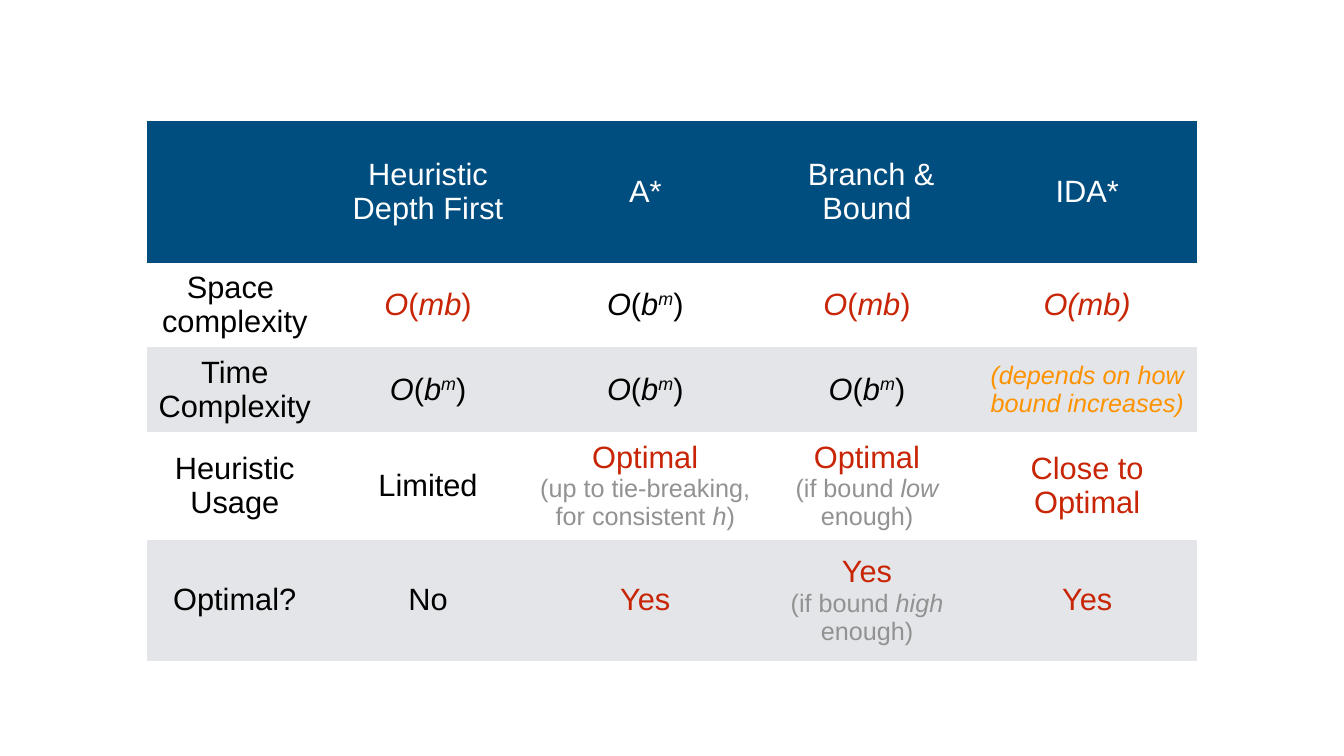
from dataclasses import dataclass, replace

from pptx import Presentation
from pptx.dml.color import RGBColor
from pptx.enum.text import MSO_ANCHOR, PP_ALIGN
from pptx.oxml.ns import qn
from pptx.table import Table, _Cell
from pptx.text.text import _Paragraph
from pptx.util import Inches, Pt

SLIDE_WIDTH, SLIDE_HEIGHT = 26.67, 15
TABLE_LEFT, TABLE_TOP = 2.92, 2.41
COLUMN_WIDTHS = (3.48, 4.19, 4.43, 4.37, 4.37)
ROW_HEIGHTS = (2.8, 1.68, 1.68, 2.14, 2.4)
CELL_MARGIN = 0.06
NO_GRID_STYLE = "{2D5ABB26-0587-4C30-8999-92F81FD0307C}"

NAVY, WHITE, BAND = "004D80", "FFFFFF", "E3E5E8"
BLACK, RED, ORANGE, GREY = "000000", "C82506", "FE9301", "929292"
ROW_FILLS = (NAVY, WHITE, BAND, WHITE, BAND)


@dataclass(frozen=True)
class Span:
    text: str
    color: str = BLACK
    size: int = 44
    italic: bool = False
    superscript: bool = False
    break_after: bool = False


Line = tuple[Span, ...]
Content = tuple[Line, ...]


def plain(*lines: str, color: str = BLACK) -> Content:
    return tuple((Span(line, color),) for line in lines)


def note(*texts: str) -> Line:
    """Small grey remark whose every second part is italic."""
    return tuple(Span(text, GREY, 36, italic=index % 2 == 1)
                 for index, text in enumerate(texts))


def big_o(argument: str, exponent: str = "", color: str = BLACK) -> Content:
    spans = [Span("O", color, italic=True), Span("(", color),
             Span(argument, color, italic=True)]
    if exponent:
        spans.append(Span(exponent, color, italic=True, superscript=True))
    return ((*spans, Span(")", color)),)


LINEAR = big_o("mb", color=RED)
EXPONENTIAL = big_o("b", "m")
YES = plain("Yes", color=RED)
OPTIMAL = replace(Span("Optimal", RED), break_after=True)

COMPARISON: tuple[tuple[Content, ...], ...] = (
    (
        (),
        plain("Heuristic", "Depth First", color=WHITE),
        plain("A*", color=WHITE),
        plain(" Branch & Bound", color=WHITE),
        plain("IDA*", color=WHITE),
    ),
    (
        plain("Space ", "complexity"),
        LINEAR,
        EXPONENTIAL,
        LINEAR,
        ((Span("O(mb)", RED, italic=True),),),
    ),
    (
        plain("Time Complexity"),
        EXPONENTIAL,
        EXPONENTIAL,
        EXPONENTIAL,
        ((Span("(depends on how bound increases)", ORANGE, 36, italic=True),),),
    ),
    (
        plain("Heuristic Usage"),
        plain("Limited"),
        ((OPTIMAL, *note("(up to tie-breaking,")),
         note("for consistent ", "h", ")")),
        ((OPTIMAL, *note("(if bound ", "low", " enough)")),),
        plain("Close to Optimal", color=RED),
    ),
    (
        plain("Optimal?"),
        plain("No"),
        YES,
        (*YES, note("(if bound ", "high", " enough)")),
        YES,
    ),
)


def rgb(color: str) -> RGBColor:
    return RGBColor.from_string(color)


def write_span(paragraph: _Paragraph, span: Span) -> None:
    run = paragraph.add_run()
    run.text = span.text
    font_format = {"name": "Arial", "size": Pt(span.size),
                   "italic": span.italic, "bold": False}
    for attribute, value in font_format.items():
        setattr(run.font, attribute, value)
    run.font.color.rgb = rgb(span.color)
    if span.superscript:
        run.font._element.set("baseline", "32000")
    if span.break_after:
        paragraph.add_line_break()


def write_cell(cell: _Cell, content: Content, fill: str) -> None:
    cell.fill.solid()
    cell.fill.fore_color.rgb = rgb(fill)
    cell.vertical_anchor = MSO_ANCHOR.MIDDLE
    for side in ("left", "right", "top", "bottom"):
        setattr(cell, f"margin_{side}", Inches(CELL_MARGIN))
    for index, line in enumerate(content):
        frame = cell.text_frame
        paragraph = frame.add_paragraph() if index else frame.paragraphs[0]
        paragraph.alignment = PP_ALIGN.CENTER
        for span in line:
            write_span(paragraph, span)


def fill_table(table: Table) -> None:
    table.first_row = table.horz_banding = False
    table._tbl.tblPr.find(qn("a:tableStyleId")).text = NO_GRID_STYLE
    for column, width in zip(table.columns, COLUMN_WIDTHS):
        column.width = Inches(width)
    for row, height, contents, fill in zip(
            table.rows, ROW_HEIGHTS, COMPARISON, ROW_FILLS):
        row.height = Inches(height)
        for cell, content in zip(row.cells, contents):
            write_cell(cell, content, fill)


def main() -> None:
    deck = Presentation()
    deck.slide_width, deck.slide_height = Inches(SLIDE_WIDTH), Inches(SLIDE_HEIGHT)
    slide = deck.slides.add_slide(deck.slide_layouts[6])
    comparison = slide.shapes.add_table(
        len(ROW_HEIGHTS), len(COLUMN_WIDTHS),
        Inches(TABLE_LEFT), Inches(TABLE_TOP),
        Inches(sum(COLUMN_WIDTHS)), Inches(sum(ROW_HEIGHTS)))
    fill_table(comparison.table)
    deck.save("out.pptx")


if __name__ == "__main__":
    main()
